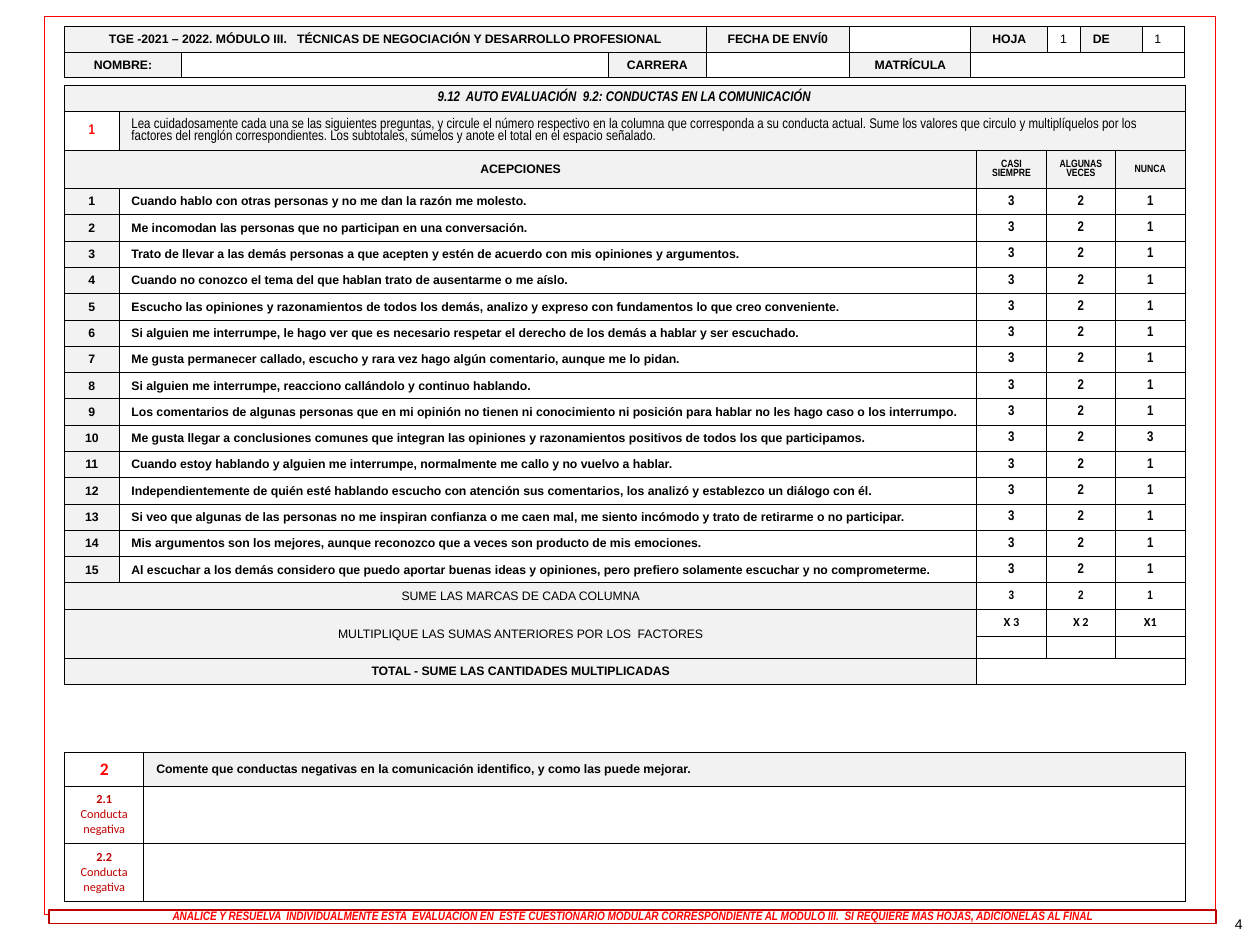
import pptx
import pptx.util
import pptx.dml.color
import pptx.enum.shapes
import pptx.enum.text
import pptx.oxml.ns
from lxml import etree

Cm, Pt = pptx.util.Cm, pptx.util.Pt
RGBColor = pptx.dml.color.RGBColor
qn = pptx.oxml.ns.qn
ALIGN = pptx.enum.text.PP_ALIGN
MIDDLE = pptx.enum.text.MSO_ANCHOR.MIDDLE
RECT = pptx.enum.shapes.MSO_SHAPE.RECTANGLE

BLACK = RGBColor(0, 0, 0)
WHITE = RGBColor(0xFF, 0xFF, 0xFF)
GREY = RGBColor(0xF2, 0xF2, 0xF2)
RED = RGBColor(0xFF, 0, 0)
DARK_RED = RGBColor(0xC0, 0, 0)

STATEMENTS = [
    "Cuando hablo con otras personas y no me dan la razón me molesto.",
    "Me incomodan las personas que no participan en una conversación.",
    "Trato de llevar a las demás personas a que acepten y estén de acuerdo con mis opiniones y argumentos.",
    "Cuando no conozco el tema del que hablan trato de ausentarme o me aíslo.",
    "Escucho las opiniones y razonamientos de todos los demás, analizo y expreso con fundamentos lo que creo conveniente.",
    "Si alguien me interrumpe, le hago ver que es necesario respetar el derecho de los demás a hablar y ser escuchado.",
    "Me gusta permanecer callado, escucho y rara vez hago algún comentario, aunque me lo pidan.",
    "Si alguien me interrumpe, reacciono callándolo y continuo hablando.",
    "Los comentarios de algunas personas que en mi opinión no tienen ni conocimiento ni posición para hablar no les hago caso o los interrumpo.",
    "Me gusta llegar a conclusiones comunes que integran las opiniones y razonamientos positivos de todos los que participamos.",
    "Cuando estoy hablando y alguien me interrumpe, normalmente me callo y no vuelvo a hablar.",
    "Independientemente de quién esté hablando escucho con atención sus comentarios, los analizó y establezco un diálogo con él.",
    "Si veo que algunas de las personas no me inspiran confianza o me caen mal, me siento incómodo y trato de retirarme o no participar.",
    "Mis argumentos son los mejores, aunque reconozco que a veces son producto de mis emociones.",
    "Al escuchar a los demás considero que puedo aportar buenas ideas y opiniones, pero prefiero solamente escuchar y no comprometerme.",
]

prs = pptx.Presentation()
prs.slide_width, prs.slide_height = Cm(25.4), Cm(19.05)
s = prs.slides.add_slide(prs.slide_layouts[6])


def add_grid(top, cols, rows):
    """Add a white table with thin black borders and small empty cells."""
    tbl = s.shapes.add_table(len(rows), len(cols), Cm(1.3), Cm(top),
                             Cm(sum(cols)), Cm(sum(rows))).table
    tbl.first_row = tbl.horz_banding = False
    for col, width in zip(tbl.columns, cols):
        col.width = Cm(width)
    for row, height in zip(tbl.rows, rows):
        row.height = Cm(height)
    for cell in tbl.iter_cells():
        cell.margin_left = cell.margin_right = Cm(0.25)
        cell.margin_top = cell.margin_bottom = Cm(0.03)
        cell.vertical_anchor = MIDDLE
        tc_pr = cell._tc.get_or_add_tcPr()
        for side in ("a:lnL", "a:lnR", "a:lnT", "a:lnB"):
            ln = etree.SubElement(tc_pr, qn(side), w=str(Pt(0.5)))
            fill = etree.SubElement(ln, qn("a:solidFill"))
            etree.SubElement(fill, qn("a:srgbClr"), val=str(BLACK))
        cell.fill.solid()
        cell.fill.fore_color.rgb = WHITE
        p = cell.text_frame.paragraphs[0]._p
        etree.SubElement(p, qn("a:endParaRPr"), sz="700")
    return tbl


def write(box, text, size=7, font="Arial", bold=True, italic=False,
          color=BLACK, align=ALIGN.CENTER, fill=None):
    """Write text in a cell or shape; box.fill changes only if a fill is given."""
    tf = box.text_frame
    tf.text = text
    for p in tf.paragraphs:
        p.alignment = align
        if font == "Arial Narrow":
            p.line_spacing = 0.9
        for r in p.runs:
            r.font.size, r.font.name = Pt(size), font
            r.font.bold, r.font.italic = bold, italic
            r.font.color.rgb = color
    if fill is not None:
        box.fill.solid()
        box.fill.fore_color.rgb = fill


# Page number
sp = s.shapes.add_textbox(Cm(19.38), Cm(18.11), Cm(5.92), Cm(1.02))
sp.text_frame.word_wrap = True
sp.text_frame.vertical_anchor = MIDDLE
write(sp, "4", size=8, bold=False, align=ALIGN.RIGHT)

# Questionnaire
quiz = add_grid(1.72, [1.1, 17.29, 1.4, 1.4, 1.4],
                [0.52, 0.79, 0.77] + [0.53] * 15 + [0.53, 0.54, 0.46, 0.52])
for first, last in [((0, 0), (0, 4)), ((1, 1), (1, 4)), ((2, 0), (2, 1)),
                    ((18, 0), (18, 1)), ((19, 0), (20, 1)),
                    ((21, 0), (21, 1)), ((21, 2), (21, 4))]:
    quiz.cell(*first).merge(quiz.cell(*last))
write(quiz.cell(0, 0), "9.12  AUTO EVALUACIÓN  9.2: CONDUCTAS EN LA COMUNICACIÓN",
      size=8, font="Arial Narrow", italic=True, fill=GREY)
write(quiz.cell(1, 0), "1", size=8, font="Arial Narrow", color=RED)
write(quiz.cell(1, 1),
      "Lea cuidadosamente cada una se las siguientes preguntas, y circule el número "
      "respectivo en la columna que corresponda a su conducta actual. Sume los valores "
      "que circulo y multiplíquelos por los factores del renglón correspondientes. Los "
      "subtotales, súmelos y anote el total en el espacio señalado.",
      size=8, font="Arial Narrow", bold=False, align=ALIGN.LEFT, fill=GREY)
for row, text, bold in [
        (2, "ACEPCIONES", True),
        (18, "SUME LAS MARCAS DE CADA COLUMNA", False),
        (19, "MULTIPLIQUE LAS SUMAS ANTERIORES POR LOS  FACTORES", False),
        (21, "TOTAL - SUME LAS CANTIDADES MULTIPLICADAS", True)]:
    write(quiz.cell(row, 0), text, bold=bold, fill=GREY)
for number, statement in enumerate(STATEMENTS, 1):
    write(quiz.cell(number + 2, 0), str(number), fill=GREY)
    write(quiz.cell(number + 2, 1), statement, align=ALIGN.JUSTIFY)

answers = [("CASI SIEMPRE", "3", "X 3"), ("ALGUNAS VECES", "2", "X 2"), ("NUNCA", "1", "X1")]
for col, (heading, score, factor) in enumerate(answers, 2):
    for row in range(2, 21):
        quiz.cell(row, col).margin_left = quiz.cell(row, col).margin_right = Cm(0.1)
    write(quiz.cell(2, col), heading, size=6, font="Arial Narrow", fill=GREY)
    for row in range(3, 18):
        write(quiz.cell(row, col), score, size=8, font="Arial Narrow")
    write(quiz.cell(18, col), score, font="Arial Narrow")
    write(quiz.cell(19, col), factor, font="Calibri")
write(quiz.cell(12, 4), "3", size=8, font="Arial Narrow")

# Student data
data = add_grid(0.53, [2.36, 8.61, 1.96, 2.9, 2.44, 1.55, 0.66, 1.24, 0.86], [0.52, 0.52])
data.cell(0, 0).merge(data.cell(0, 2))
data.cell(1, 5).merge(data.cell(1, 8))
for row, col, text in [
        (0, 0, "TGE -2021 – 2022. MÓDULO III.   TÉCNICAS DE NEGOCIACIÓN Y DESARROLLO PROFESIONAL"),
        (0, 3, "FECHA DE ENVÍ0"), (0, 5, "HOJA"),
        (1, 0, "NOMBRE:"), (1, 2, "CARRERA"), (1, 4, "MATRÍCULA")]:
    write(data.cell(row, col), text, fill=GREY)
write(data.cell(0, 7), "DE", align=ALIGN.LEFT, fill=GREY)
for col in (6, 8):
    write(data.cell(0, col), "1", bold=False, align=ALIGN.LEFT)

# Comments
notes = add_grid(15.16, [1.6, 21], [0.69, 1.15, 1.17])
write(notes.cell(0, 0), "2", size=10, font="Calibri", color=RED)
write(notes.cell(0, 1),
      "Comente que conductas negativas en la comunicación identifico, y como las puede mejorar.",
      align=ALIGN.LEFT, fill=GREY)
for row in (1, 2):
    cell = notes.cell(row, 0)
    write(cell, f"2.{row}\nConducta negativa", font="Calibri", bold=False, color=DARK_RED)
    cell.text_frame.paragraphs[0].runs[0].font.bold = True

# Page frame
sp = s.shapes.add_shape(RECT, Cm(0.9), Cm(0.33), Cm(23.6), Cm(18.1))
sp.shadow.inherit = False
sp.fill.background()
sp.line.color.rgb, sp.line.width = RED, Pt(0.5)

# Closing instruction
sp = s.shapes.add_shape(RECT, Cm(0.99), Cm(18.34), Cm(23.52), Cm(0.28))
sp.shadow.inherit = False
sp.line.color.rgb, sp.line.width = DARK_RED, Pt(1)
tf = sp.text_frame
tf.vertical_anchor = MIDDLE
tf.margin_top = tf.margin_bottom = 0
write(sp, "ANALICE Y RESUELVA  INDIVIDUALMENTE ESTA  EVALUACIÓN EN  ESTE CUESTIONARIO MODULAR "
      "CORRESPONDIENTE AL MÓDULO III.  SI REQUIERE MÁS HOJAS, ADICIONELAS AL FINAL",
      font="Arial Narrow", italic=True, color=RED, fill=WHITE)

prs.save("out.pptx")
